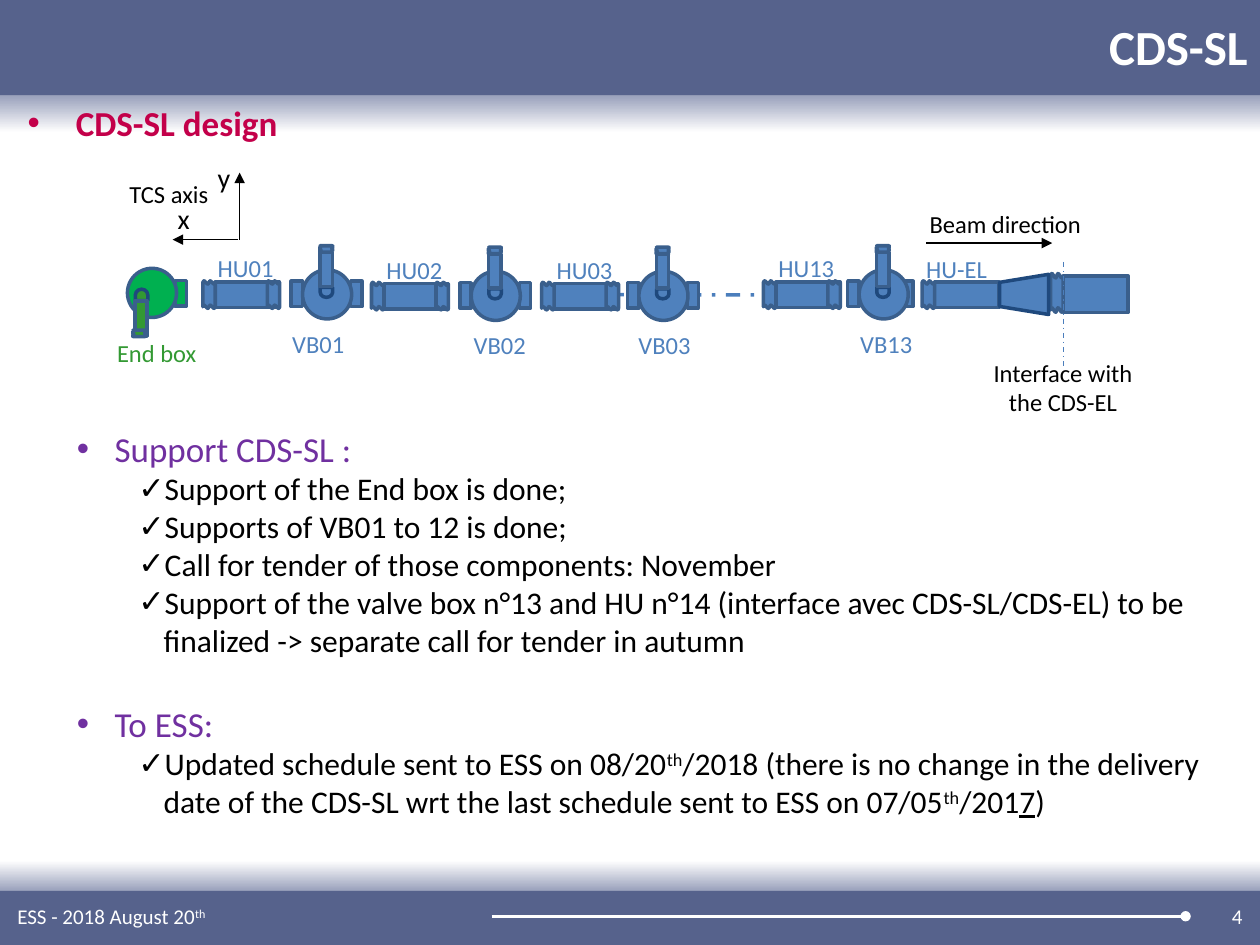
from dataclasses import dataclass
from typing import NamedTuple

from lxml import etree
from pptx import Presentation
from pptx import util as u
from pptx.dml.color import RGBColor
from pptx.enum import dml, shapes, text
from pptx.oxml.ns import qn

Kind = shapes.MSO_SHAPE
Side = text.PP_ALIGN
Mid = text.MSO_ANCHOR.MIDDLE


@dataclass(frozen=True)
class Theme:
    font: str = "Calibri"
    bar: str = "56628C"
    haze: str = "9AA1BC"
    white: str = "FFFFFF"
    black: str = "000000"
    red: str = "C3004A"
    purple: str = "7030A0"
    blue: str = "4F81BD"
    edge: str = "3A5F8C"
    navy: str = "1F497D"
    dash: str = "4B7EBC"
    green: str = "00B050"
    leaf: str = "339933"
    title: int = 28
    head: int = 20
    item: int = 18
    axis: int = 16
    label: int = 14
    foot: int = 12


class Box(NamedTuple):
    left: float
    top: float
    width: float
    height: float


class Run(NamedTuple):
    text: str
    sup: bool = False
    under: bool = False


class Pipe(NamedTuple):
    name: str
    left: float
    drop: float = 0


class Valve(NamedTuple):
    name: str
    left: float
    label: float
    drop: float = 0
    out: float = 0.97


class Level(NamedTuple):
    mark: str
    left: float
    hang: float
    size: int
    color: str
    bold: bool = False


class Point(NamedTuple):
    level: Level
    runs: list[Run]
    gap: float = 0


T = Theme()
TOP = Level("•", 0.97, 0.97, T.head, T.red, True)
SUB = Level("•", 1.75, 0.76, T.head, T.purple)
TICK = Level("✓", 2.74, 0.51, T.item, T.black)

POINTS = [
    Point(TOP, [Run("CDS-SL design")]),
    Point(SUB, [Run("Support CDS-SL :")], 162),
    Point(TICK, [Run("Support of the End box is done;")]),
    Point(TICK, [Run("Supports of VB01 to 12 is done;")]),
    Point(TICK, [Run("Call for tender of those components: November")]),
    Point(TICK, [Run("Support of the valve box n°13 and HU n°14 (interface avec "
                     "CDS-SL/CDS-EL) to be finalized -> separate call for tender in autumn")]),
    Point(SUB, [Run("To ESS:")], 25),
    Point(TICK, [Run("Updated schedule sent to ESS on 08/20"), Run("th", sup=True),
                 Run("/2018 (there is no change in the delivery date of the CDS-SL "
                     "wrt the last schedule sent to ESS on 07/05"),
                 Run("th", sup=True), Run("/201"), Run("7", under=True), Run(")")]),
]
PIPES = [Pipe("HU03", 10.92, 0.03), Pipe("HU02", 7.49, 0.03),
         Pipe("HU01", 4.09), Pipe("HU13", 15.39)]
VALVES = [Valve("VB01", 6.1, 5.64), Valve("VB02", 9.5, 9.3, 0.03),
          Valve("VB03", 12.88, 12.62, 0.03), Valve("VB13", 17.32, 17.09, out=0.86)]

deck = Presentation()
deck.slide_width, deck.slide_height = u.Cm(25.4), u.Cm(19.05)
slide = deck.slides.add_slide(deck.slide_layouts[6])


def rgb(code: str) -> RGBColor:
    return RGBColor.from_string(code)


def fill_runs(para, runs: list[Run], size: int, color: str, bold: bool = False) -> None:
    for part in runs:
        run = para.add_run()
        run.text = part.text
        font = run.font
        font.name, font.size, font.bold = T.font, u.Pt(size), bold
        font.color.rgb = rgb(color)
        if part.under:
            font.underline = True
        if part.sup:
            run._r.get_or_add_rPr().set("baseline", "30000")


def write(words: str | list[Run], box: Box, *, size: int = T.label, color: str = T.black,
          bold: bool = False, align=Side.LEFT, anchor=text.MSO_ANCHOR.TOP,
          wrap: bool = False) -> None:
    frame = slide.shapes.add_textbox(*map(u.Cm, box)).text_frame
    frame.word_wrap, frame.vertical_anchor = wrap, anchor
    para = frame.paragraphs[0]
    para.alignment = align
    runs = [Run(words)] if isinstance(words, str) else words
    fill_runs(para, runs, size, color, bold)


def draw(kind, box: Box, fill: str = T.blue, edge: str | None = T.edge, turn: float = 0):
    shape = slide.shapes.add_shape(kind, *map(u.Cm, box))
    shape.shadow.inherit = False
    shape.fill.solid()
    shape.fill.fore_color.rgb = rgb(fill)
    if edge:
        shape.line.color.rgb = rgb(edge)
        shape.line.width = u.Pt(2)
    else:
        shape.line.fill.background()
    shape.rotation = turn
    return shape


def fade(box: Box, first: str, last: str) -> None:
    """Draw a band that fades from top to bottom."""
    fill = draw(Kind.RECTANGLE, box, edge=None).fill
    fill.gradient()
    fill.gradient_angle = 270
    for stop, color in zip(fill.gradient_stops, (first, last)):
        stop.color.rgb = rgb(color)


def link(x1: float, y1: float, x2: float, y2: float, color: str = T.black,
         width: float = 1, tail: str = "", dash: bool = False):
    line = slide.shapes.add_connector(shapes.MSO_CONNECTOR.STRAIGHT,
                                      *map(u.Cm, (x1, y1, x2, y2)))
    line.line.color.rgb = rgb(color)
    line.line.width = u.Pt(width)
    if dash:
        line.line.dash_style = dml.MSO_LINE.DASH_DOT
    if tail:
        etree.SubElement(line.line._get_or_add_ln(), qn("a:tailEnd"), type=tail)
    etree.SubElement(line._element.spPr, qn("a:effectLst"))
    return line


def draw_pipe(pipe: Pipe, closed: bool = True):
    """Draw a pipe with its flanges and return its body."""
    x, y = pipe.left, 5.66 + pipe.drop
    body = draw(Kind.RECTANGLE, Box(x + 0.25, y + 0.03, 1.3, 0.51))
    for left in (x, x + 1.3) if closed else (x,):
        draw(Kind.DOUBLE_WAVE, Box(left, y, 0.25, 0.56))
    return body


def draw_valve(valve: Valve) -> None:
    x, y = valve.left, 5.44 + valve.drop
    for dx in (-0.23, valve.out):
        draw(Kind.RECTANGLE, Box(x + dx, y + 0.23, 0.23, 0.51))
    draw(Kind.OVAL, Box(x, y, 0.99, 0.99))
    draw(Kind.FLOWCHART_DELAY, Box(x + 0.38, y + 0.33, 0.2, 0.25), edge=T.navy, turn=90)
    draw(Kind.RECTANGLE, Box(x + 0.13, y - 0.13, 0.69, 0.25), turn=90)
    draw(Kind.DOUBLE_WAVE, Box(x + 0.41, y - 0.56, 0.13, 0.28), turn=90)
    write(valve.name, Box(valve.label, y + 1.06, 1.57, 0.86), color=T.blue)


def draw_end() -> None:
    """Draw the end box, its lever pointing down."""
    draw(Kind.RECTANGLE, Box(3.53, 5.66, 0.23, 0.51), T.green)
    draw(Kind.OVAL, Box(2.57, 5.41, 0.99, 0.99), T.green)
    draw(Kind.FLOWCHART_DELAY, Box(2.74, 5.82, 0.23, 0.25), T.leaf, T.navy, 270)
    draw(Kind.RECTANGLE, Box(2.49, 6.3, 0.71, 0.25), T.leaf, turn=270)
    draw(Kind.DOUBLE_WAVE, Box(2.74, 6.58, 0.13, 0.28), T.leaf, turn=90)
    write("End box", Box(2.11, 6.68, 2.13, 0.86), color=T.leaf)


def draw_exit() -> None:
    """Draw the last pipe, its cone and the interface."""
    draw(Kind.RECTANGLE, Box(21.44, 5.56, 1.3, 0.74))
    draw(Kind.DOUBLE_WAVE, Box(21.18, 5.51, 0.25, 0.79))
    draw_pipe(Pipe("HU-EL", 18.59), closed=False)
    cone = draw(Kind.TRAPEZOID, Box(20.24, 5.44, 0.81, 0.99), edge=T.navy, turn=270)
    cone.adjustments[0] = 0.2
    write("HU-EL", Box(18.42, 5, 1.75, 0.86), color=T.blue)
    link(21.44, 5.28, 21.44, 7.37, T.dash, 0.75, dash=True)
    write("Interface with the CDS-EL", Box(19.74, 7.09, 3.38, 1.45),
          align=Side.CENTER, wrap=True)


def draw_axes() -> None:
    link(4.8, 4.83, 3.48, 4.83, tail="triangle")
    link(4.83, 4.83, 4.83, 3.48, tail="triangle")
    write("x", Box(3.33, 3.94, 0.76, 0.94), size=T.axis)
    write("y", Box(4.14, 3.12, 0.76, 0.94), size=T.axis)
    write("TCS axis", Box(2.36, 3.48, 2.11, 0.86))
    link(18.67, 4.9, 21.21, 4.9, tail="triangle")
    write("Beam direction", Box(18.49, 4.09, 3.61, 0.86))


def draw_frame() -> None:
    fade(Box(0, 1.93, 25.4, 0.74), T.haze, T.white)
    fade(Box(0, 17.35, 25.4, 0.61), T.white, T.haze)
    draw(Kind.RECTANGLE, Box(0, 0, 25.4, 1.93), T.bar, None)
    draw(Kind.RECTANGLE, Box(0, 17.96, 25.4, 1.09), T.bar, None)
    link(9.91, 18.47, 23.9, 18.47, T.white, 1.5, "oval")
    foot = dict(size=T.foot, color=T.white, anchor=Mid, wrap=True)
    write([Run("ESS - 2018 August 20"), Run("th", sup=True)],
          Box(0.1, 17.96, 15.42, 1.02), **foot)
    write("4", Box(19.38, 17.96, 5.92, 1.02), align=Side.RIGHT, **foot)
    write("CDS-SL", Box(2.69, -0.08, 22.71, 2.01), size=T.title, color=T.white,
          bold=True, align=Side.RIGHT, anchor=Mid, wrap=True)


def list_points(box: Box) -> None:
    frame = slide.shapes.add_textbox(*map(u.Cm, box)).text_frame
    frame.word_wrap = True
    frame.margin_left = frame.margin_right = frame.margin_bottom = u.Cm(0.05)
    for i, point in enumerate(POINTS):
        para = frame.add_paragraph() if i else frame.paragraphs[0]
        level = point.level
        para.space_before = u.Pt(point.gap)
        props = para._p.get_or_add_pPr()
        props.set("marL", str(u.Cm(level.left)))
        props.set("indent", str(-u.Cm(level.hang)))
        etree.SubElement(props, qn("a:buFont"), typeface="Arial")
        etree.SubElement(props, qn("a:buChar"), char=level.mark)
        fill_runs(para, point.runs, level.size, level.color, level.bold)


def main() -> None:
    draw_frame()
    list_points(Box(0.51, 1.93, 24.89, 16.41))
    gap = link(11.51, 5.94, 15.64, 5.94, T.dash, 2, dash=True)
    for pipe in PIPES:
        body = draw_pipe(pipe)
        write(pipe.name, Box(pipe.left + 0.05, 4.98 + pipe.drop, 1.65, 0.86), color=T.blue)
    gap.end_connect(body, 1)
    draw_exit()
    for valve in VALVES:
        draw_valve(valve)
    draw_end()
    draw_axes()
    deck.save("out.pptx")


if __name__ == "__main__":
    main()
